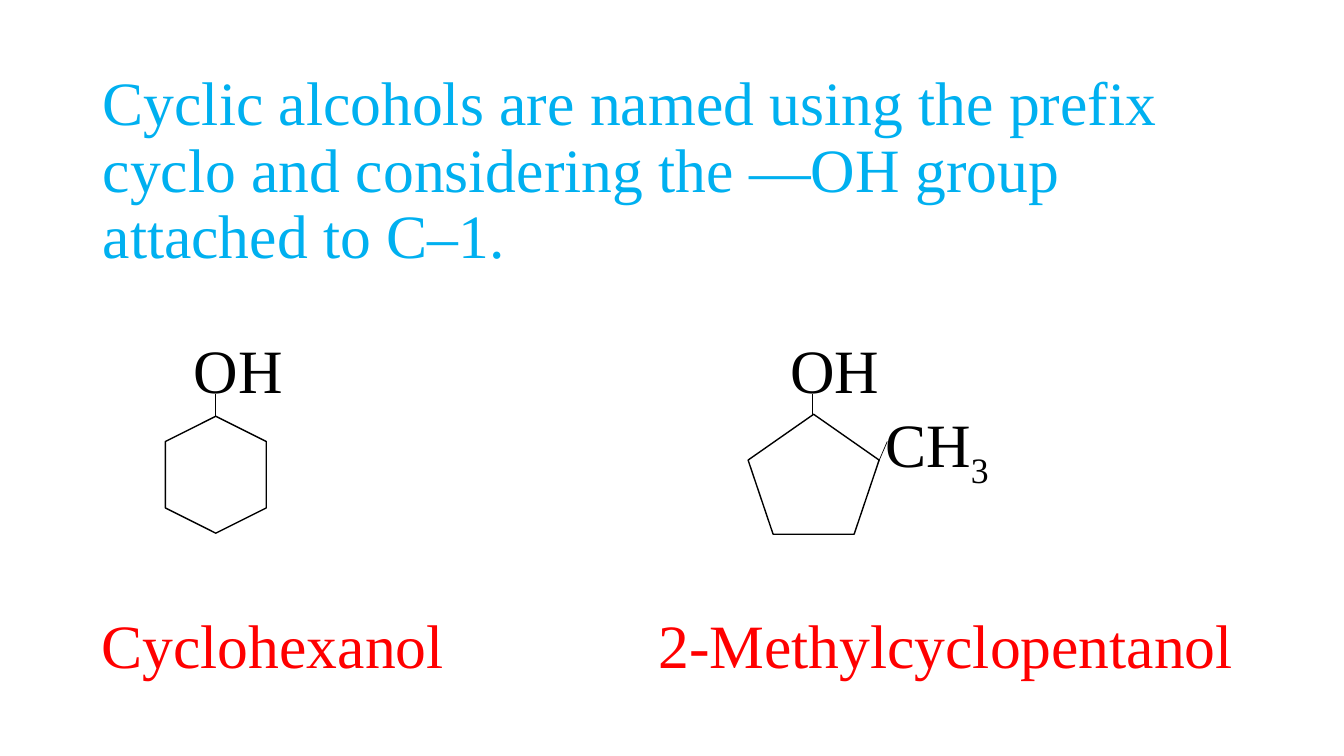
from lxml.etree import SubElement
from pptx import Presentation
from pptx.dml.color import RGBColor
from pptx.enum.shapes import MSO_CONNECTOR, MSO_SHAPE
from pptx.enum.text import MSO_ANCHOR, PP_ALIGN
from pptx.oxml.ns import qn
from pptx.util import Inches, Pt

FONT, SIZE = "Times New Roman", 44
BLUE, RED, BLACK, WHITE = "00B0F0", "FF0000", "000000", "FFFFFF"

TITLE = ("Cyclic alcohols are named using the prefix cyclo and considering "
         "the —OH group attached to C–1.")
# text, subscript, left, top, width, colour
LABELS = [
    ("OH", "", 1.92, 3.29, 0.95, BLACK),
    ("OH", "", 7.84, 3.29, 0.95, BLACK),
    ("CH", "3", 8.78, 4.03, 1.2, BLACK),
    ("Cyclohexanol", "", 1.01, 6.02, 3.6, RED),
    ("2-Methylcyclopentanol", "", 6.53, 6.02, 5.9, RED),
]
# shape, left, top, width, height, rotation
RINGS = [
    (MSO_SHAPE.HEXAGON, 1.56, 4.21, 1.16, 1, 90),
    (MSO_SHAPE.REGULAR_PENTAGON, 7.42, 4.11, 1.3, 1.19, 0),
]
# start x, start y, end x, end y
BONDS = [
    (2.14, 3.91, 2.14, 4.13),
    (8.06, 3.91, 8.06, 4.13),
    (8.8, 4.38, 8.71, 4.59),
]


def rgb(value):
    return RGBColor.from_string(value)


def add_text(p, text, color=BLACK, subscript=False):
    r = p.add_run()
    r.text = text
    r.font.name, r.font.size = FONT, Pt(SIZE)
    r.font.color.rgb = rgb(color)
    if subscript:
        r.font._element.set("baseline", "-25000")


def add_label(s, text, subscript, left, top, width, color):
    tf = s.shapes.add_textbox(*map(Inches, (left, top, width, 0.7))).text_frame
    tf.margin_left = tf.margin_right = tf.margin_top = tf.margin_bottom = 0
    tf.word_wrap = False
    add_text(tf.paragraphs[0], text, color)
    if subscript:
        add_text(tf.paragraphs[0], subscript, color, subscript=True)


def add_ring(s, kind, left, top, width, height, rotation):
    sp = s.shapes.add_shape(kind, *map(Inches, (left, top, width, height)))
    sp.rotation = rotation
    sp.shadow.inherit = False
    sp.fill.solid()
    sp.fill.fore_color.rgb = rgb(WHITE)
    sp.line.color.rgb = rgb(BLACK)
    sp.line.width = Pt(1)


def add_bond(s, *ends):
    line = s.shapes.add_connector(MSO_CONNECTOR.STRAIGHT, *map(Inches, ends))
    line.line.color.rgb = rgb(BLACK)
    line.line.width = Pt(0.5)
    SubElement(line._element.spPr, qn("a:effectLst"))


def main():
    prs = Presentation()
    prs.slide_width, prs.slide_height = Inches(13.33), Inches(7.5)
    s = prs.slides.add_slide(prs.slide_layouts[5])

    title = s.shapes.title
    title.left, title.top, title.width, title.height = map(
        Inches, (0.92, 0.67, 11.5, 2.1))
    tf = title.text_frame
    tf.word_wrap = True
    tf.vertical_anchor = MSO_ANCHOR.TOP
    p = tf.paragraphs[0]
    p.alignment = PP_ALIGN.LEFT
    p.line_spacing = 0.9
    add_text(p, TITLE, BLUE)

    for ring in RINGS:
        add_ring(s, *ring)
    for bond in BONDS:
        add_bond(s, *bond)
    for label in LABELS:
        add_label(s, *label)

    prs.save("out.pptx")


if __name__ == "__main__":
    main()
